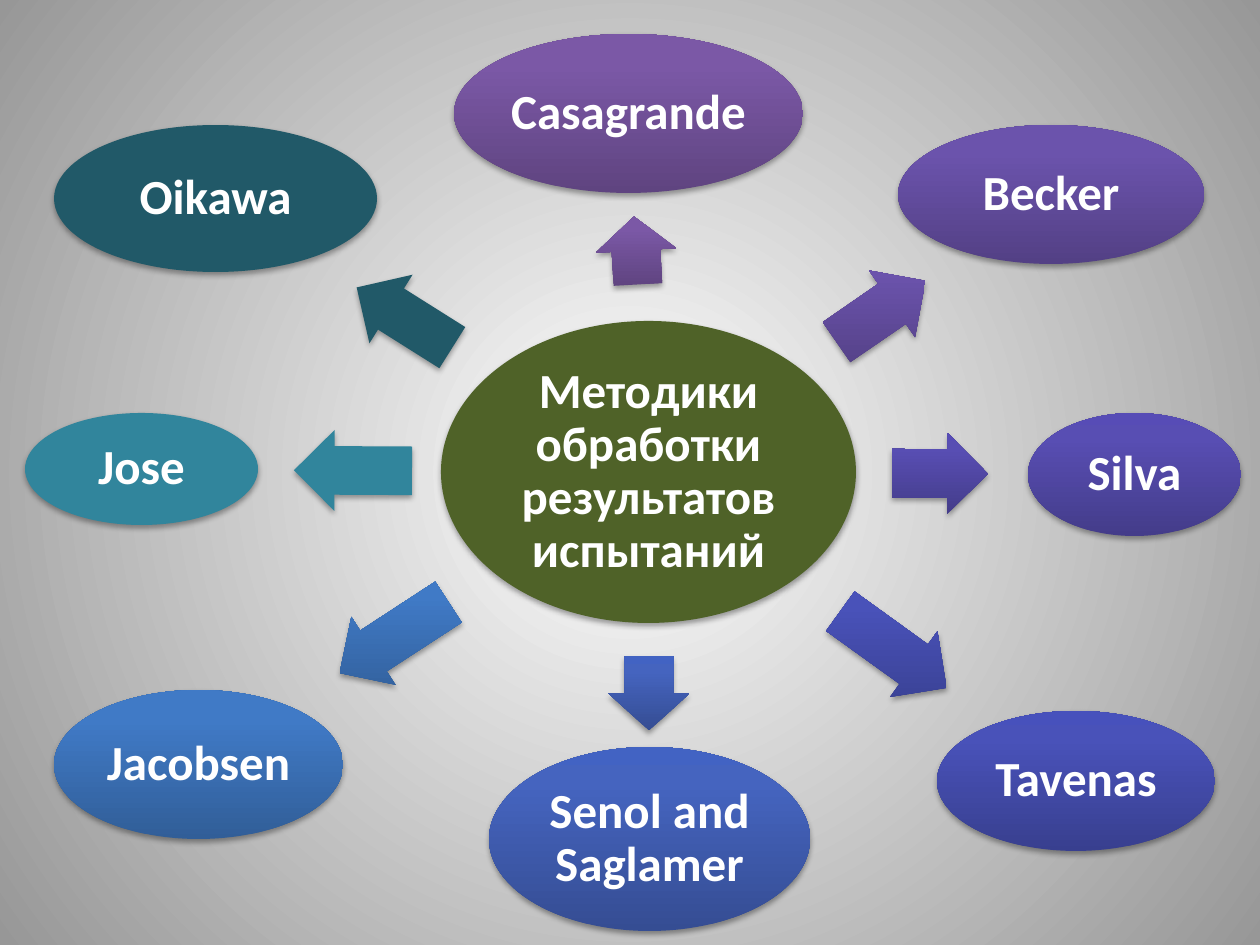
from lxml import etree
from pptx import Presentation
from pptx.dml.color import RGBColor as RGB
from pptx.enum.shapes import MSO_SHAPE as Kind
from pptx.enum.text import MSO_ANCHOR as Anchor, PP_ALIGN as Align
from pptx.oxml import parse_xml
from pptx.oxml.ns import qn, nsdecls
from pptx.util import Emu, Pt

SCALE = 914400 / 126
WHITE = RGB(0xFF, 0xFF, 0xFF)
GRAY = RGB(0x97, 0x97, 0x97)
OLIVE = RGB(0x4F, 0x62, 0x28)
TEAL = RGB(0x31, 0x85, 0x9C)
PINE = RGB(0x21, 0x59, 0x68)
PLUM = RGB(0x5F, 0x44, 0x80), RGB(0x7B, 0x58, 0xA6), RGB(0x7C, 0x57, 0xA8)
VIOLET = RGB(0x53, 0x40, 0x85), RGB(0x6B, 0x53, 0xAC), RGB(0x6B, 0x52, 0xAF)
GRAPE = RGB(0x44, 0x3C, 0x8A), RGB(0x58, 0x4E, 0xB3), RGB(0x57, 0x4C, 0xB6)
INDIGO = RGB(0x38, 0x3F, 0x8F), RGB(0x49, 0x52, 0xB9), RGB(0x47, 0x51, 0xBC)
ROYAL = RGB(0x35, 0x4D, 0x93), RGB(0x45, 0x64, 0xBF), RGB(0x42, 0x63, 0xC3)
BLUE = RGB(0x31, 0x5E, 0x98), RGB(0x40, 0x7A, 0xC6), RGB(0x3E, 0x7A, 0xC9)

UPWARD = '<a:lin ang="16200000" scaled="0"/>'
RADIAL = ('<a:path path="circle"><a:fillToRect l="50000" t="50000" '
          'r="50000" b="50000"/></a:path>')

RAYS = [
    ("Casagrande", PLUM, (602, 210, 68, 81), 266.7, (454, 34, 349, 159)),
    ("Becker", VIOLET, (827, 271, 108, 81), 325.4, (898, 125, 306, 139)),
    ("Silva", GRAPE, (892, 433, 96, 81), 0.3, (1028, 413, 213, 123)),
    ("Tavenas", INDIGO, (828, 609, 131, 81), 35.8, (937, 711, 278, 140)),
    ("Senol and Saglamer", ROYAL, (612, 653, 74, 81), 90, (489, 747, 321, 184)),
    ("Jacobsen", BLUE, (329, 597, 130, 81), 146.9, (54, 690, 289, 149)),
    ("Jose", TEAL, (294, 430, 118, 81), 180.3, (25, 413, 233, 112)),
    ("Oikawa", PINE, (348, 277, 113, 81), 212.2, (54, 125, 323, 147)),
]


def px(n):
    return Emu(round(n * SCALE))


def blend(root, fill, stops, course):
    fill.gradient()
    old = root.find(".//" + qn("a:gradFill"))
    marks = "".join(f'<a:gs pos="{pos * 1000}"><a:srgbClr val="{tone}"/></a:gs>'
                    for pos, tone in stops)
    new = parse_xml(f'<a:gradFill {nsdecls("a")} rotWithShape="0">'
                    f'<a:gsLst>{marks}</a:gsLst>{course}</a:gradFill>')
    old.getparent().replace(old, new)


def write(shape, text, size=28, font="Calibri", color=WHITE, bold=True):
    frame = shape.text_frame
    frame.word_wrap = True
    frame.vertical_anchor = Anchor.MIDDLE
    frame.margin_left = frame.margin_right = px(5)
    frame.margin_top = frame.margin_bottom = px(5)
    para = frame.paragraphs[0]
    para.alignment = Align.CENTER
    para.line_spacing = 0.9
    run = para.add_run()
    run.text = text
    run.font.size = Pt(size)
    run.font.name = font
    run.font.bold = bold
    run.font.color.rgb = color


class Board:
    def __init__(self, slide):
        self.slide = slide

    def backdrop(self, inner, outer):
        blend(self.slide.element, self.slide.background.fill,
              [(0, inner), (100, outer)], RADIAL)

    def shape(self, kind, box, paint):
        shape = self.slide.shapes.add_shape(kind, *map(px, box))
        if isinstance(paint, RGB):
            shape.fill.solid()
            shape.fill.fore_color.rgb = paint
        else:
            blend(shape.element, shape.fill, zip((0, 80, 100), paint), UPWARD)
        shape.line.fill.background()
        self.shade(shape)
        return shape

    def shade(self, shape):
        shape.shadow.inherit = False
        glow = etree.SubElement(
            shape.element.spPr.find(qn("a:effectLst")), qn("a:outerShdw"),
            blurRad="40000", dist="23000", dir="5400000", rotWithShape="0")
        tone = etree.SubElement(glow, qn("a:srgbClr"), val="000000")
        etree.SubElement(tone, qn("a:alpha"), val="35000")

    def oval(self, text, box, paint):
        write(self.shape(Kind.OVAL, box, paint), text)

    def arrow(self, box, turn, paint):
        arrow = self.shape(Kind.RIGHT_ARROW, box, paint)
        arrow.adjustments[0] = 0.6
        arrow.adjustments[1] = 0.5
        arrow.rotation = turn


def main():
    deck = Presentation()
    deck.slide_width, deck.slide_height = px(1260), px(945)
    board = Board(deck.slides.add_slide(deck.slide_layouts[6]))
    board.backdrop(WHITE, GRAY)
    board.oval("Методики обработки результатов испытаний",
               (441, 321, 415, 302), OLIVE)
    for name, paint, tip, turn, box in RAYS:
        board.arrow(tip, turn, paint)
        board.oval(name, box, paint)
    deck.save("out.pptx")


if __name__ == "__main__":
    main()
